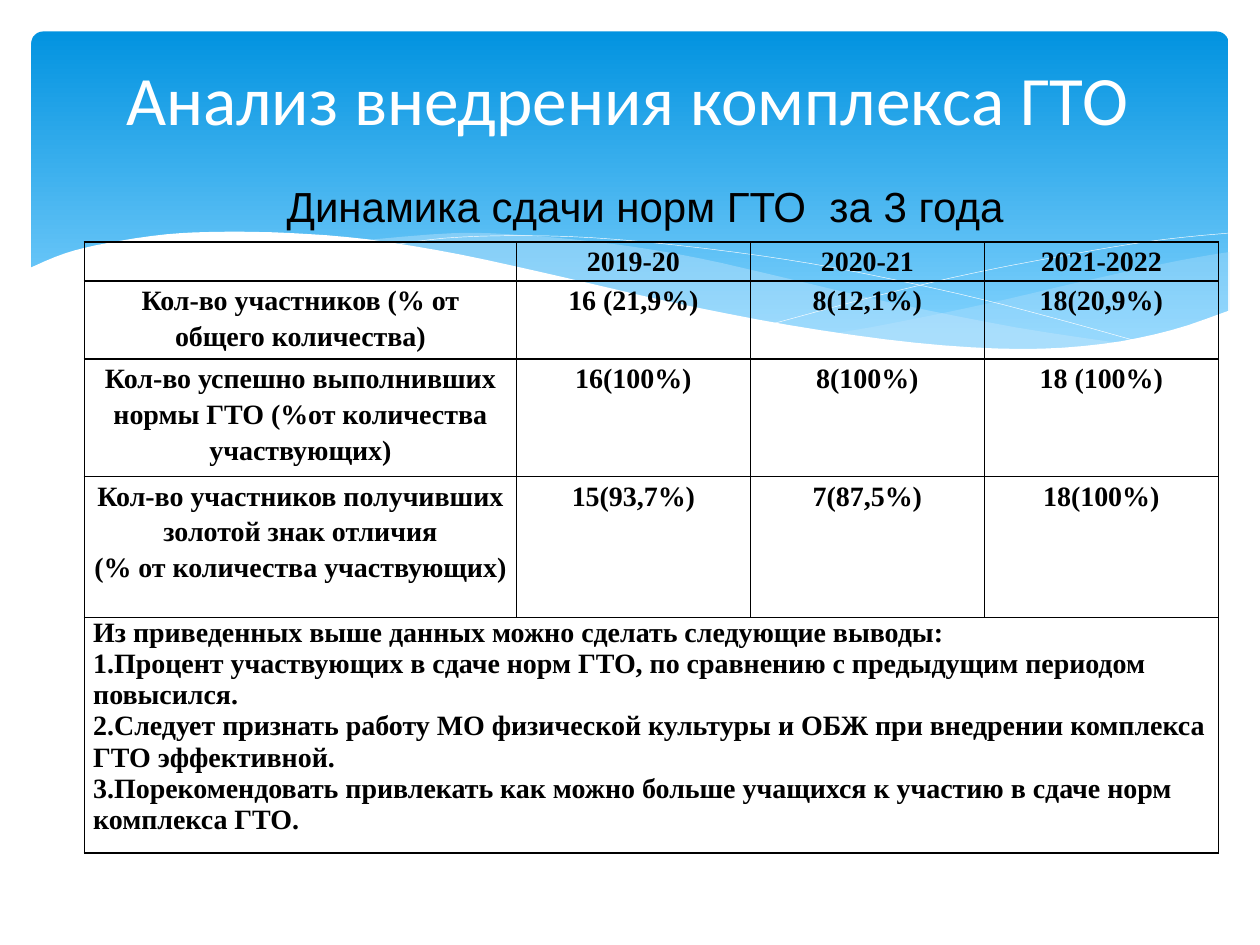
import lxml.etree
import pptx
import pptx.dml.color
import pptx.enum.shapes
import pptx.enum.text
import pptx.oxml.ns
import pptx.util

COLORS = {"deep": "0293E0", "light": "83D3FE", "wave": "C6E7FC", "white": "FFFFFF", "black": "000000"}
SLIDE_WIDTH, SLIDE_HEIGHT = 10, 7.5
ALIGN = pptx.enum.text.PP_ALIGN
ANCHOR = pptx.enum.text.MSO_ANCHOR

# Control points of the waves, on a grid ten units wide
WAVES = [
    {"fill": "wave", "alpha": 29, "curves": [
        [(9.76, 2), (9.35, 2.07), (8.61, 2.23), (7.79, 2.42), (7.06, 2.57), (6.61, 2.65)],
        [(6.61, 2.65), (7.19, 2.72), (7.69, 2.77), (8.14, 2.78), (8.63, 2.75), (9.05, 2.69), (9.42, 2.59), (9.76, 2.47)]]},
    {"fill": "wave", "alpha": 40, "curves": [
        [(8.93, 2.73), (8.07, 2.6), (7.06, 2.4), (6.29, 2.22), (5.55, 2.05), (4.89, 1.94), (4.2, 1.87), (3.61, 1.85), (2.86, 1.91)],
        [(2.86, 1.91), (3.62, 2.03), (4.49, 2.22), (5.3, 2.4), (6.01, 2.55), (6.8, 2.68), (7.48, 2.76), (8.07, 2.78), (8.93, 2.73)]]},
    {"line": "white", "curves": [
        [(3.09, 1.95), (3.53, 1.89), (4.16, 1.87), (4.89, 1.9), (5.82, 2), (6.65, 2.13), (7.6, 2.33), (8.31, 2.51), (9.07, 2.72)]]},
    {"line": "white", "curves": [
        [(6.13, 2.57), (6.95, 2.35), (7.76, 2.16), (8.66, 1.99), (9.24, 1.9), (9.75, 1.85)]]},
    {"fill": "white", "curves": [
        [(9.77, 2.46), (9.3, 2.62), (8.75, 2.73), (8.09, 2.77), (7.26, 2.72), (6.26, 2.58), (5.29, 2.39), (4.47, 2.2),
         (3.65, 2.02), (2.92, 1.9), (2.3, 1.85), (1.77, 1.84), (1.32, 1.86), (0.85, 1.93), (0.52, 2.01), (0.23, 2.13)],
        [(0.23, 3.29), (9.77, 3.29)]]},
]

YEARS = ["", "2019-20", "2020-21", "2021-2022"]
RESULTS = [
    ["Кол-во участников (% от общего количества)", "16 (21,9%)", "8(12,1%)", "18(20,9%)"],
    ["Кол-во успешно выполнивших нормы ГТО (%от количества участвующих)", "16(100%)", "8(100%)", "18 (100%)"],
    ["Кол-во участников получивших золотой знак отличия\n(% от количества участвующих)",
     "15(93,7%)", "7(87,5%)", "18(100%)"],
]
CONCLUSIONS = "\n".join([
    "Из приведенных выше данных можно сделать следующие выводы:",
    "1.Процент участвующих в сдаче норм ГТО, по сравнению с предыдущим периодом повысился.",
    "2.Следует признать работу МО физической культуры и ОБЖ при внедрении комплекса ГТО эффективной.",
    "3.Порекомендовать привлекать как можно больше учащихся к участию в сдаче норм комплекса ГТО.",
])


def rgb(name):
    return pptx.dml.color.RGBColor.from_string(COLORS[name])


def to_emu(box):
    return [pptx.util.Inches(length) for length in box]


def write_text(text_frame, text, font, size, color="black", bold=False, align=ALIGN.CENTER, spacing=1.0):
    text_frame.word_wrap = True
    for index, line in enumerate(text.split("\n")):
        paragraph = text_frame.add_paragraph() if index else text_frame.paragraphs[0]
        paragraph.alignment = align
        paragraph.line_spacing = spacing
        run = paragraph.add_run()
        run.text = line
        run.font.name = font
        run.font.size = pptx.util.Pt(size)
        run.font.bold = bold
        run.font.color.rgb = rgb(color)


def smooth(points, steps=4):
    """Return points of a Catmull-Rom curve through the control points."""
    if len(points) < 3:
        return points
    padded = [points[0], *points, points[-1]]
    curve = []
    for before, start, end, after in zip(padded, padded[1:], padded[2:], padded[3:]):
        for step in range(steps):
            t = step / steps
            curve.append(tuple(
                b + (c - a) * t / 2 + (a - 2.5 * b + 2 * c - d / 2) * t ** 2 + (1.5 * (b - c) + (d - a) / 2) * t ** 3
                for a, b, c, d in zip(before, start, end, after)))
    return curve + [points[-1]]


def draw_wave(slide, box, curves, fill=None, line=None, alpha=None):
    left, top, width, _ = box
    unit = width / 10
    points = [(round(1000 * (left + x * unit)), round(1000 * (top + y * unit)))
              for curve in curves for x, y in smooth(curve)]
    builder = slide.shapes.build_freeform(*points[0], scale=pptx.util.Inches(1) / 1000)
    builder.add_line_segments(points[1:], close=fill is not None)
    shape = builder.convert_to_shape()
    shape.shadow.inherit = False
    if fill:
        shape.fill.solid()
        shape.fill.fore_color.rgb = rgb(fill)
        shape.line.fill.background()
    else:
        shape.fill.background()
        shape.line.color.rgb = rgb(line)
        shape.line.width = pptx.util.Pt(0.25)
    if alpha:
        color = shape.fill._xPr.find(".//" + pptx.oxml.ns.qn("a:srgbClr"))
        lxml.etree.SubElement(color, pptx.oxml.ns.qn("a:alpha"), val=str(alpha * 1000))


def draw_banner(slide, box):
    left, top, width, height = box
    margin = 0.025 * width
    panel = slide.shapes.add_shape(
        pptx.enum.shapes.MSO_SHAPE.ROUNDED_RECTANGLE,
        *to_emu((left + margin, top + margin, width - 2 * margin, 0.36 * height)))
    panel.adjustments[0] = 0.034
    panel.shadow.inherit = False
    panel.line.fill.background()
    panel.fill.gradient()
    panel.fill.gradient_angle = 270
    for stop, color, position in zip(panel.fill.gradient_stops, ("deep", "light"), (0, 0.9)):
        stop.color.rgb = rgb(color)
        stop.position = position
    for wave in WAVES:
        draw_wave(slide, box, **wave)


def place_title(slide, box):
    title = slide.shapes.title
    slide.shapes._spTree.append(title._element)  # in front of the banner
    title.left, title.top, title.width, title.height = to_emu(box)
    title.text_frame.vertical_anchor = ANCHOR.MIDDLE
    title.text_frame.margin_right = pptx.util.Inches(0.48)
    write_text(title.text_frame, "Анализ внедрения комплекса ГТО", "Calibri", 39.6, color="white")


def place_subtitle(slide, box):
    text_frame = slide.shapes.add_textbox(*to_emu(box)).text_frame
    text_frame.vertical_anchor = ANCHOR.MIDDLE
    write_text(text_frame, "Динамика сдачи норм ГТО  за 3 года", "Arial", 24)


def format_cell(cell):
    cell.margin_left = cell.margin_right = pptx.util.Inches(0.07)
    cell.margin_top = cell.margin_bottom = 0
    properties = cell._tc.get_or_add_tcPr()
    for side in ("a:lnL", "a:lnR", "a:lnT", "a:lnB"):
        border = lxml.etree.SubElement(properties, pptx.oxml.ns.qn(side), w=str(pptx.util.Pt(1)))
        fill = lxml.etree.SubElement(border, pptx.oxml.ns.qn("a:solidFill"))
        lxml.etree.SubElement(fill, pptx.oxml.ns.qn("a:srgbClr"), val=COLORS["black"])
    cell.fill.background()


def place_results_table(slide, box):
    left, top, width, height = box
    rows = [YEARS, *RESULTS, [CONCLUSIONS]]
    table = slide.shapes.add_table(len(rows), len(YEARS), *to_emu(box)).table
    table.first_row = table.horz_banding = False
    for column, share in zip(table.columns, (0.381, 0.2063, 0.2063, 0.2063)):
        column.width = pptx.util.Inches(width * share)
    for row, share in zip(table.rows, (0.064, 0.128, 0.192, 0.231, 0.385)):
        row.height = pptx.util.Inches(height * share)
    for cell in table.iter_cells():
        format_cell(cell)
    last = len(rows) - 1
    table.cell(last, 0).merge(table.cell(last, len(YEARS) - 1))
    for row_index, texts in enumerate(rows):
        is_conclusion = row_index == last
        for column_index, text in enumerate(texts):
            write_text(table.cell(row_index, column_index).text_frame, text, "Times New Roman", 16, bold=True,
                       align=ALIGN.LEFT if is_conclusion else ALIGN.CENTER,
                       spacing=1.0 if is_conclusion else 1.15)


def main():
    presentation = pptx.Presentation()
    presentation.slide_width = pptx.util.Inches(SLIDE_WIDTH)
    presentation.slide_height = pptx.util.Inches(SLIDE_HEIGHT)
    slide = presentation.slides.add_slide(presentation.slide_layouts[5])
    content_left, content_width = 0.067 * SLIDE_WIDTH, 0.9 * SLIDE_WIDTH
    draw_banner(slide, (0, 0, SLIDE_WIDTH, SLIDE_HEIGHT))
    place_title(slide, (content_left, 0.17, content_width, 1.21))
    place_subtitle(slide, (2.01, 1.38, 6.22, 0.5))
    place_results_table(slide, (content_left, 1.92, content_width, 4.85))
    presentation.save("out.pptx")


if __name__ == "__main__":
    main()
